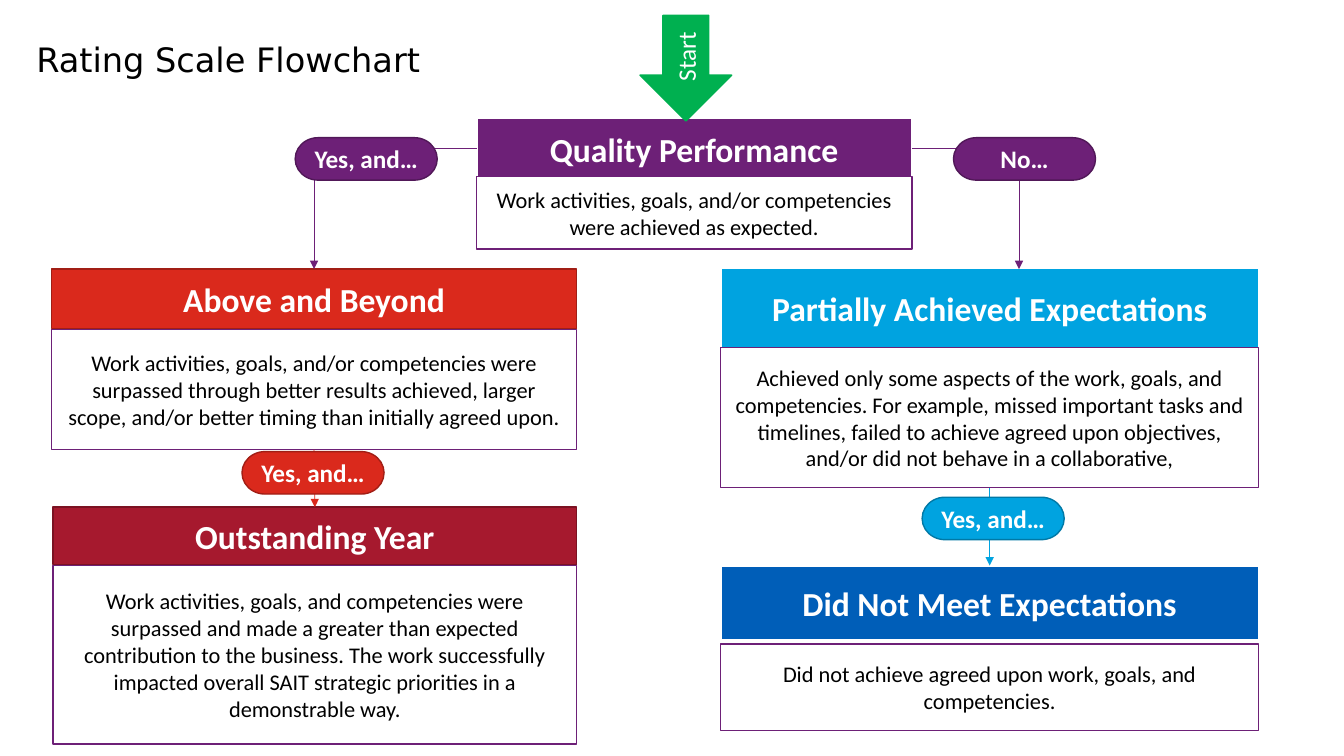
from lxml import etree
from pptx import Presentation
from pptx.dml.color import RGBColor
from pptx.enum.shapes import MSO_CONNECTOR, MSO_SHAPE
from pptx.enum.text import MSO_ANCHOR, PP_ALIGN
from pptx.oxml.ns import qn
from pptx.util import Cm, Pt

PROCESS = MSO_SHAPE.FLOWCHART_PROCESS
TERMINATOR = MSO_SHAPE.FLOWCHART_TERMINATOR
DOWN_ARROW = MSO_SHAPE.DOWN_ARROW
STRAIGHT = MSO_CONNECTOR.STRAIGHT
ELBOW = MSO_CONNECTOR.ELBOW
MIDDLE = MSO_ANCHOR.MIDDLE
LEFT = PP_ALIGN.LEFT
CENTER = PP_ALIGN.CENTER
SIDE_TOP, SIDE_LEFT, SIDE_BOTTOM, SIDE_RIGHT = range(4)

BLACK = RGBColor(0x00, 0x00, 0x00)
WHITE = RGBColor(0xFF, 0xFF, 0xFF)
PURPLE = RGBColor(0x6D, 0x20, 0x77)
DARK_PURPLE = RGBColor(0x51, 0x18, 0x58)
RED = RGBColor(0xDA, 0x29, 0x1C)
DARK_RED = RGBColor(0xA1, 0x1E, 0x15)
CRIMSON = RGBColor(0xA6, 0x19, 0x2E)
DARK_CRIMSON = RGBColor(0x7B, 0x12, 0x22)
SKY = RGBColor(0x00, 0xA3, 0xE0)
DARK_SKY = RGBColor(0x00, 0x79, 0xA6)
BLUE = RGBColor(0x00, 0x5E, 0xB8)
GREEN = RGBColor(0x00, 0xB0, 0x50)


class Flowchart:
    """Draws the elements of a flowchart on one slide in one style."""

    title_font = "DejaVu Sans"
    body_font = "Calibri"
    pill_width, pill_height = 3.58, 1.07

    def __init__(self, slide):
        self.slide = slide

    def format_text(self, shape, size, color, bold=False, font=body_font, align=CENTER):
        frame = shape.text_frame
        frame.word_wrap = True
        frame.vertical_anchor = MIDDLE
        for paragraph in frame.paragraphs:
            paragraph.alignment = align
            for run in paragraph.runs:
                run.font.name = font
                run.font.size = Pt(size)
                run.font.bold = bold
                run.font.color.rgb = color

    def title(self, text, left, top, width, height):
        shape = self.slide.shapes.title
        shape.left, shape.top = Cm(left), Cm(top)
        shape.width, shape.height = Cm(width), Cm(height)
        shape.text_frame.text = text
        shape.text_frame.paragraphs[0].line_spacing = 0.9
        self.format_text(shape, 24, BLACK, font=self.title_font, align=LEFT)

    def box(self, kind, text, place, fill, outline, size, color=WHITE, bold=True, line_width=1):
        shape = self.slide.shapes.add_shape(kind, *(Cm(length) for length in place))
        shape.shadow.inherit = False
        shape.fill.solid()
        shape.fill.fore_color.rgb = fill
        shape.line.color.rgb = outline
        shape.line.width = Pt(line_width)
        shape.text_frame.text = text
        self.format_text(shape, size, color, bold)
        return shape

    def card(self, heading, text, left, width, heading_span, text_span, fill, outline):
        line_width = 1.5 if outline == WHITE else 1
        header_place = (left, heading_span[0], width, heading_span[1])
        body_place = (left, text_span[0], width, text_span[1])
        header = self.box(PROCESS, heading, header_place, fill, outline, 24, line_width=line_width)
        body = self.box(PROCESS, text, body_place, WHITE, PURPLE, 16, BLACK, bold=False)
        return header, body

    def pill(self, text, left, top, fill, outline):
        place = (left, top, self.pill_width, self.pill_height)
        return self.box(TERMINATOR, text, place, fill, outline, 18)

    def start_arrow(self, text, place):
        shape = self.box(DOWN_ARROW, text, place, GREEN, GREEN, 18, bold=False)
        shape.text_frame._txBody.bodyPr.set("vert", "vert270")

    def arrow(self, kind, start, end, color):
        connector = self.slide.shapes.add_connector(kind, *start, *end)
        connector.line.color.rgb = color
        connector.line.width = Pt(0.5)
        properties = connector._element.spPr
        if kind == ELBOW:
            properties.find(qn("a:prstGeom")).set("prst", "bentConnector2")
        etree.SubElement(properties.find(qn("a:ln")), qn("a:tailEnd"), type="triangle")
        etree.SubElement(properties, qn("a:effectLst"))
        return connector

    def drop(self, upper, lower, color):
        start = (upper.left + upper.width // 2, upper.top + upper.height)
        end = (lower.left + lower.width // 2, lower.top)
        connector = self.arrow(STRAIGHT, start, end, color)
        connector.begin_connect(upper, SIDE_BOTTOM)
        connector.end_connect(lower, SIDE_TOP)


def main():
    presentation = Presentation()
    presentation.slide_width, presentation.slide_height = Cm(33.87), Cm(19.05)
    chart = Flowchart(presentation.slides.add_slide(presentation.slide_layouts[5]))
    chart.title("Rating Scale Flowchart", 0.66, -0.3, 11.84, 3.68)

    quality, _ = chart.card(
        "Quality Performance",
        "Work activities, goals, and/or competencies were achieved as expected.",
        12.01, 10.97, (2.97, 1.55), (4.45, 1.83), PURPLE, WHITE)
    above, above_text = chart.card(
        "Above and Beyond",
        "Work activities, goals, and/or competencies were surpassed through better results "
        "achieved, larger scope, and/or better timing than initially agreed upon.",
        1.3, 13.23, (6.78, 1.5), (8.31, 3.02), RED, DARK_RED)
    outstanding, _ = chart.card(
        "Outstanding Year",
        "Work activities, goals, and competencies were surpassed and made a greater than "
        "expected contribution to the business. The work successfully impacted overall SAIT "
        "strategic priorities in a demonstrable way.",
        1.34, 13.19, (12.78, 1.45), (14.25, 4.5), CRIMSON, DARK_CRIMSON)
    _, partial_text = chart.card(
        "Partially Achieved Expectations",
        "Achieved only some aspects of the work, goals, and competencies. For example, missed "
        "important tasks and timelines, failed to achieve agreed upon objectives, and/or did "
        "not behave in a collaborative,",
        18.16, 13.56, (6.76, 2.01), (8.76, 3.53), SKY, WHITE)
    unmet, _ = chart.card(
        "Did Not Meet Expectations",
        "Did not achieve agreed upon work, goals, and competencies.",
        18.16, 13.56, (14.25, 1.88), (16.23, 2.18), BLUE, WHITE)

    branch_top = quality.top + quality.height // 2
    above_top = (above.left + above.width // 2, above.top)
    yes_branch = chart.arrow(ELBOW, (quality.left, branch_top), above_top, PURPLE)
    yes_branch.begin_connect(quality, SIDE_LEFT)
    yes_branch.end_connect(above, SIDE_TOP)
    no_start = (quality.left + quality.width, branch_top)
    no_branch = chart.arrow(ELBOW, no_start, (Cm(25.68), above.top), PURPLE)
    no_branch.begin_connect(quality, SIDE_RIGHT)
    chart.drop(above_text, outstanding, RED)
    chart.drop(partial_text, unmet, SKY)

    chart.pill("Yes, and…", 7.44, 3.47, PURPLE, DARK_PURPLE)
    chart.pill("No…", 24.03, 3.47, PURPLE, DARK_PURPLE)
    chart.pill("Yes, and…", 6.1, 11.38, RED, DARK_RED)
    chart.pill("Yes, and…", 23.24, 12.53, SKY, DARK_SKY)
    chart.start_arrow("Start", (16.13, 0.39, 2.31, 2.66))

    presentation.save("out.pptx")


if __name__ == "__main__":
    main()
